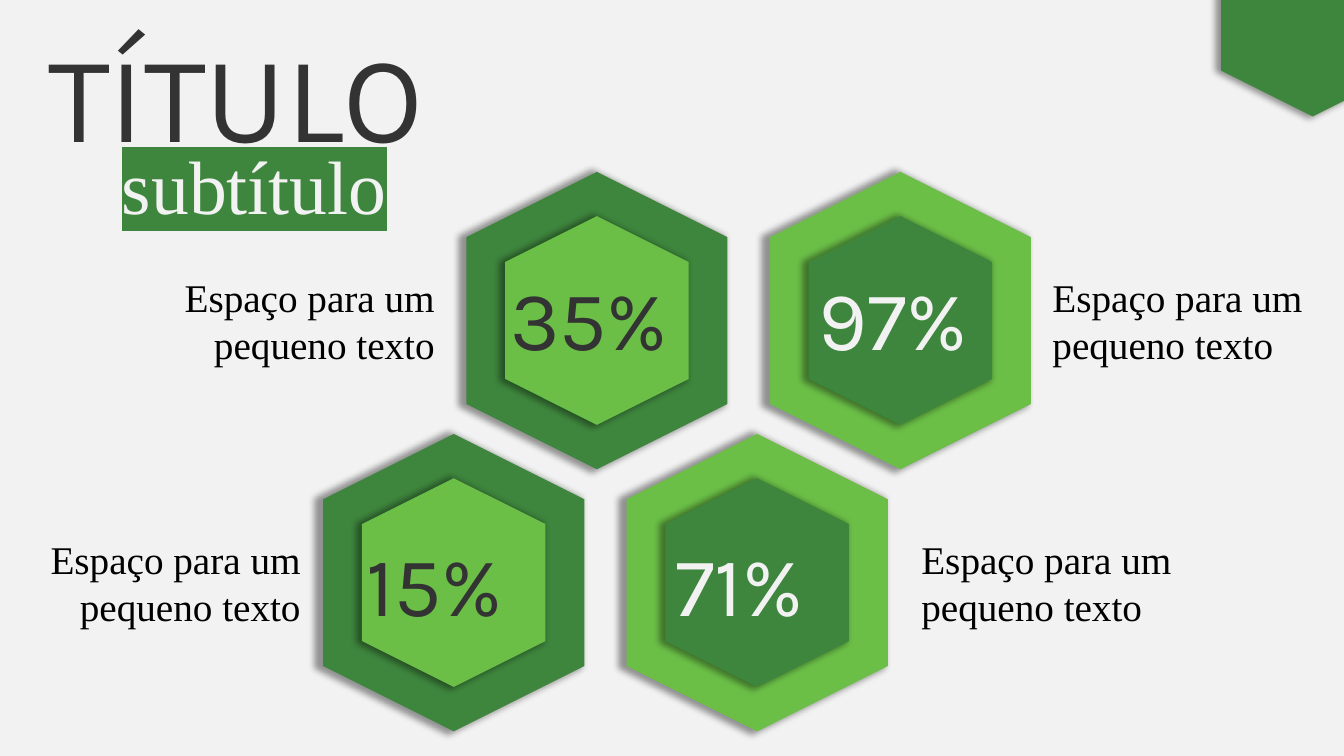
from lxml.etree import SubElement
from pptx import Presentation
from pptx.dml.color import RGBColor
from pptx.enum.shapes import MSO_SHAPE
from pptx.enum.text import MSO_AUTO_SIZE, PP_ALIGN
from pptx.oxml.ns import qn
from pptx.util import Inches, Pt

DARK = RGBColor(0x3E, 0x86, 0x3D)
LIGHT = RGBColor(0x6B, 0xBF, 0x47)
PALE = RGBColor(0xF2, 0xF2, 0xF2)
INK = RGBColor(0x33, 0x33, 0x33)
BLACK = RGBColor(0, 0, 0)

SANS, SERIF = "Karla", "Times New Roman"
NOTE = "Espaço para um pequeno texto"
ROWS = [["35%", "97%"], ["15%", "71%"]]
SIDES = [
    {"outer": DARK, "inner": LIGHT, "ink": INK, "nudge": 0.96, "align": PP_ALIGN.RIGHT},
    {"outer": LIGHT, "inner": DARK, "ink": PALE, "nudge": 0.91, "align": PP_ALIGN.LEFT},
]
NOTES = [[0.55, 10.34], [-0.78, 9.04]]
LIFTS = [0.59, 0.55]
START, STEP, SHIFT = (5.92, 3.18), (3.01, 2.6), 1.42
BIG, SMALL = (2.95, 2.59), (2.07, 1.82)
CORNER = (13.02, 0.12)

TITLE = {"size": Pt(88), "name": SANS, "color": INK}
SUB = {"size": Pt(54), "name": SERIF, "color": PALE}
BODY = {"size": Pt(28), "name": SERIF, "color": BLACK}
COUNT = {"size": Pt(60), "name": SANS}


def hexagon(home, mid, size, fill):
    left, top = (m - s / 2 for m, s in zip(mid, size))
    shape = home.add_shape(MSO_SHAPE.HEXAGON, *map(Inches, (left, top, *size)))
    shape.rotation = 90
    shape.fill.solid()
    shape.fill.fore_color.rgb = fill
    shape.line.fill.background()
    shape.shadow.inherit = False
    glow = SubElement(
        shape.element.spPr.find(qn("a:effectLst")), qn("a:outerShdw"),
        blurRad="63500", sx="102000", sy="102000", algn="ctr", rotWithShape="0")
    tint = SubElement(glow, qn("a:prstClr"), val="black")
    SubElement(tint, qn("a:alpha"), val="40000")


def label(home, area, text, style, wrap=False, align=PP_ALIGN.LEFT):
    frame = home.add_textbox(*map(Inches, area)).text_frame
    frame.word_wrap = wrap
    frame.auto_size = MSO_AUTO_SIZE.SHAPE_TO_FIT_TEXT
    line = frame.paragraphs[0]
    line.alignment = align
    run = line.add_run()
    run.text = text
    for key, value in style.items():
        if key == "color":
            run.font.color.rgb = value
        else:
            setattr(run.font, key, value)
    return run


def mark(run, color):
    props = run.font._element if hasattr(run.font, "_element") else run._r.rPr
    band = SubElement(props, qn("a:highlight"))
    SubElement(band, qn("a:srgbClr"), val=str(color))
    props.find(qn("a:solidFill")).addnext(band)


def main():
    deck = Presentation()
    deck.slide_width, deck.slide_height = Inches(13.33), Inches(7.5)
    slide = deck.slides.add_slide(deck.slide_layouts[6])
    slide.background.fill.solid()
    slide.background.fill.fore_color.rgb = PALE
    home = slide.shapes

    cells = [
        (START[0] + c * STEP[0] - r * SHIFT, START[1] + r * STEP[1], r, c, side)
        for r in range(len(ROWS)) for c, side in enumerate(SIDES)
    ]
    for x, y, r, c, side in cells:
        hexagon(home, (x, y), BIG, side["outer"])
    for x, y, r, c, side in cells:
        label(home, (NOTES[r][c], y - 0.52, 3.86, 1.04), NOTE, BODY, True, side["align"])

    label(home, (0.38, 0.14, 4.32, 1.58), "TÍTULO", TITLE)
    mark(label(home, (1.11, 1.33, 2.85, 1.01), "subtítulo", SUB), DARK)

    for x, y, r, c, side in cells:
        group = home.add_group_shape().shapes
        hexagon(group, (x, y), SMALL, side["inner"])
        area = (x - side["nudge"], y - LIFTS[r], 1.91, 1.11)
        label(group, area, ROWS[r][c], {**COUNT, "color": side["ink"]})

    hexagon(home, CORNER, SMALL, DARK)
    deck.save("out.pptx")


if __name__ == "__main__":
    main()
